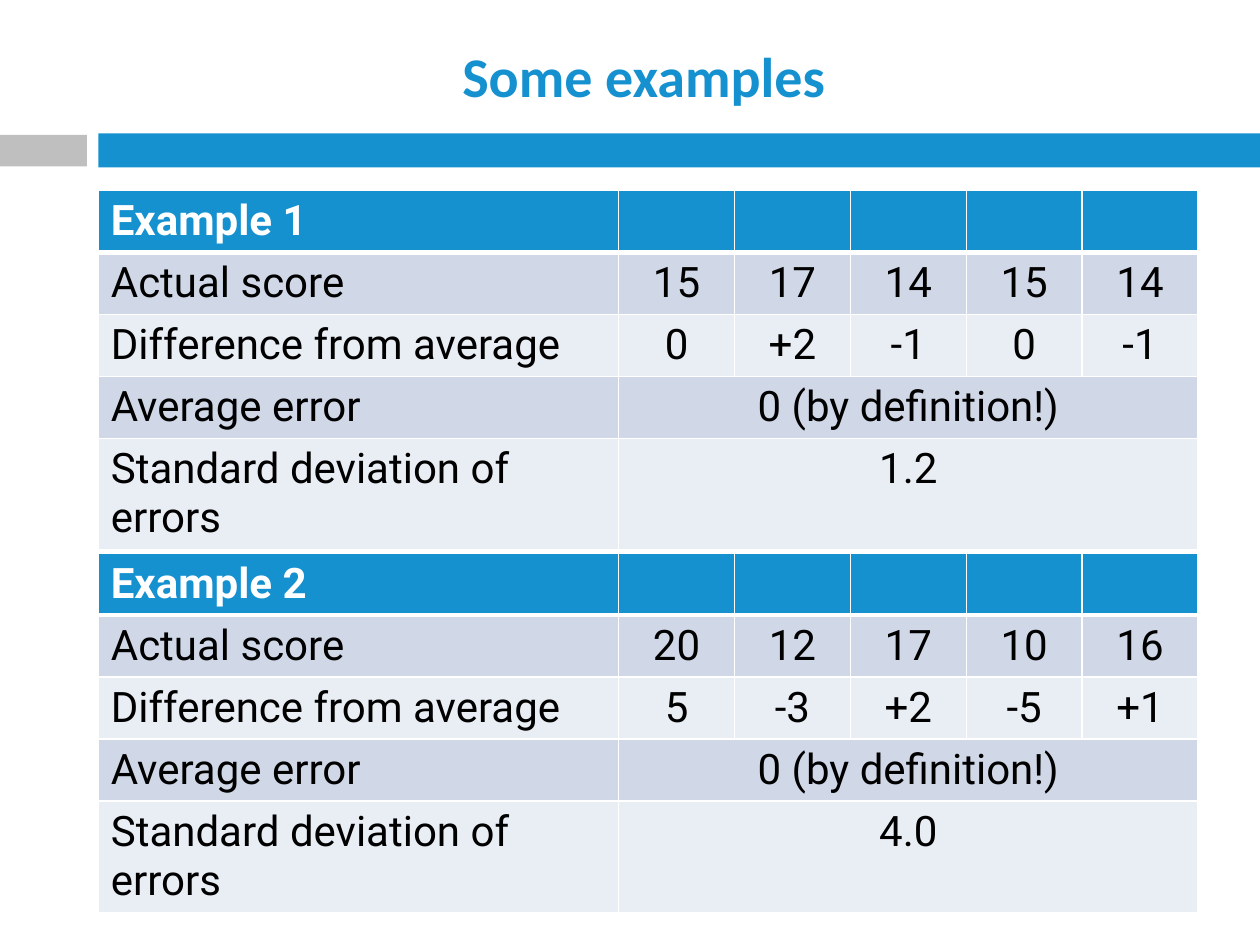
from lxml.etree import fromstring
from pptx import Presentation
from pptx.dml.color import RGBColor as RGB
from pptx.enum.shapes import MSO_SHAPE as Shape
from pptx.enum.text import MSO_ANCHOR as Anchor, PP_ALIGN as Align
from pptx.util import Inches, Pt

# Content
TITLE = "Some examples"
NOTE = "0 (by definition!)"
TABLES = [
    (1.51, [
        ["Example 1"],
        ["Actual score", "15", "17", "14", "15", "14"],
        ["Difference from average", "0", "+2", "-1", "0", "-1"],
        ["Average error", NOTE],
        ["Standard deviation of errors", "1.2"],
    ]),
    (4.39, [
        ["Example 2"],
        ["Actual score", "20", "12", "17", "10", "16"],
        ["Difference from average", "5", "-3", "+2", "-5", "+1"],
        ["Average error", NOTE],
        ["Standard deviation of errors", "4.0"],
    ]),
]
THEME = {
    "blue": "1691D0", "gray": "BFBFBF", "white": "FFFFFF", "black": "000000",
    "bands": ["E9EDF4", "D0D8E8"],
    "title": ("Calibri", 32), "body": ("Roboto", 24),
}
BARS = [((0.78, 1.06, 9.22, 0.27), "blue"), ((0, 1.07, 0.69, 0.25), "gray")]
LEFT, ROW = 0.78, 0.41
COLS = [4.13] + [0.92] * 5
NS = "http://schemas.openxmlformats.org/drawingml/2006/main"


def paint(fill, color):
    fill.solid()
    fill.fore_color.rgb = RGB.from_string(color)


def style(para, kind, color, bold, align):
    name, size = THEME[kind]
    para.alignment = align
    for key, val in {"name": name, "size": Pt(size), "bold": bold}.items():
        setattr(para.font, key, val)
    para.font.color.rgb = RGB.from_string(color)


def edge(cell, top, bottom):
    props = cell._tc.get_or_add_tcPr()
    sides = {"L": 1, "R": 1, "T": top, "B": bottom}
    for pos, (side, width) in enumerate(sides.items()):
        props.insert(pos, fromstring(
            f'<a:ln{side} xmlns:a="{NS}" w="{Pt(width)}"><a:solidFill>'
            f'<a:srgbClr val="{THEME["white"]}"/></a:solidFill></a:ln{side}>'))


def add_scores(slide, top, rows):
    frame = slide.shapes.add_table(
        len(rows), len(COLS), Inches(LEFT), Inches(top),
        Inches(sum(COLS)), Inches(ROW * len(rows)))
    table = frame.table
    for col, width in zip(table.columns, COLS):
        col.width = Inches(width)
    for r, texts in enumerate(rows):
        table.rows[r].height = Inches(ROW)
        head = r == 0
        back = THEME["blue"] if head else THEME["bands"][r % 2]
        ink = THEME["white"] if head else THEME["black"]
        for c in range(len(COLS)):
            cell = table.cell(r, c)
            paint(cell.fill, back)
            edge(cell, 3 if r == 1 else 1, 3 if head else 1)
            if c < len(texts):
                cell.text = texts[c]
                style(cell.text_frame.paragraphs[0], "body", ink, head,
                      Align.CENTER if c else Align.LEFT)
        # A single value spans all score columns
        if len(texts) == 2:
            table.cell(r, 1).merge(table.cell(r, len(COLS) - 1))


def main():
    deck = Presentation()
    deck.slide_width, deck.slide_height = Inches(10), Inches(7.5)
    slide = deck.slides.add_slide(deck.slide_layouts[5])

    # Bars under the title
    for box, color in BARS:
        bar = slide.shapes.add_shape(Shape.RECTANGLE, *map(Inches, box))
        bar.shadow.inherit = False
        paint(bar.fill, THEME[color])
        bar.line.fill.background()

    # Title
    title = slide.shapes.title
    place = {"left": LEFT, "top": 0.26, "width": 8.66, "height": 0.68}
    for key, val in place.items():
        setattr(title, key, Inches(val))
    title.text_frame.text = TITLE
    title.text_frame.vertical_anchor = Anchor.MIDDLE
    style(title.text_frame.paragraphs[0], "title", THEME["blue"], True,
          Align.CENTER)

    # Score tables
    for top, rows in TABLES:
        add_scores(slide, top, rows)
    deck.save("out.pptx")


if __name__ == "__main__":
    main()
